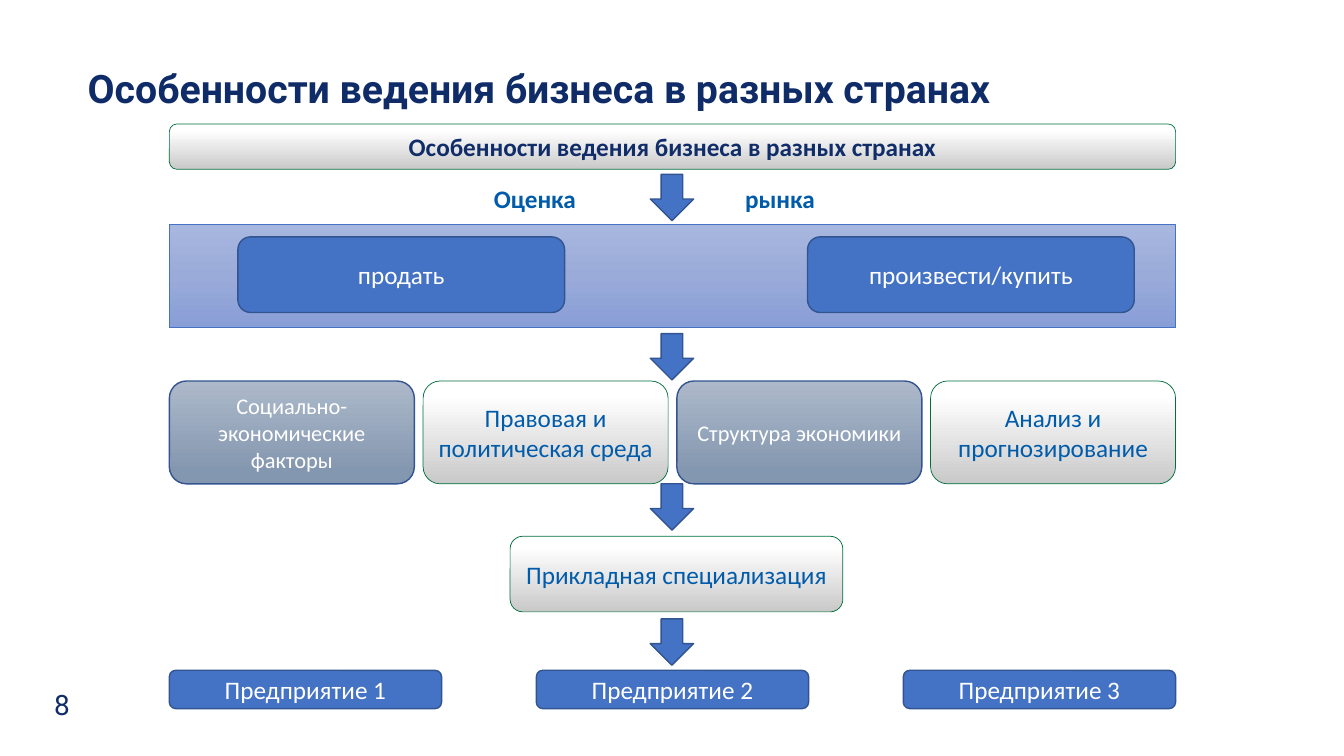
from pptx import Presentation
from pptx import util as u
from pptx.dml import color
from pptx.enum import shapes, text
from pptx.oxml import ns
from lxml import etree

NAVY, TITLE_NAVY, AZURE, WHITE = "102D69", "0F2C68", "005BAA", "FFFFFF"
RECT = shapes.MSO_SHAPE.RECTANGLE
ROUNDED = shapes.MSO_SHAPE.ROUNDED_RECTANGLE
ARROW = shapes.MSO_SHAPE.DOWN_ARROW


def rgb(value):
    """Turn a hex string into a colour."""
    return color.RGBColor.from_string(value)


class BusinessSlide:
    """Holds the box styles and draws elements on the current slide."""

    styles = {
        "solid": {"fill": "4472C4", "line": ("325491", 1)},
        "band": {"stops": [(0, "A8B7DF"), (50, "9AABD9"), (100, "889ED7")],
                 "angle": 270, "line": ("4472C4", 0.5)},
        "light": {"stops": [(0, "C9C9C9"), (86, "FFFFFF")],
                  "angle": 90, "line": ("00703C", 0.5)},
        "steel": {"stops": [(0, "ADB9CA"), (88, "8497B0")],
                  "angle": 270, "line": ("325491", 1)},
    }

    def __init__(self, slide):
        """Keep the slide that is drawn on."""
        self.slide = slide

    def set_text(self, shape, wording, ink, size=18, bold=False, font="Calibri",
                 align=text.PP_ALIGN.CENTER):
        """Put one formatted paragraph into a shape."""
        shape.text_frame.word_wrap = True
        paragraph = shape.text_frame.paragraphs[0]
        paragraph.alignment = align
        run = paragraph.add_run()
        run.text = wording
        for key, value in {"name": font, "size": u.Pt(size), "bold": bold}.items():
            setattr(run.font, key, value)
        run.font.color.rgb = rgb(ink)

    def gradient(self, shape, stops, angle):
        """Fill a shape with a linear gradient of any number of stops."""
        shape.fill.gradient()
        shape.fill.gradient_angle = angle
        stop_list = shape.element.find(".//" + ns.qn("a:gsLst"))
        for stop in list(stop_list):
            stop_list.remove(stop)
        for position, value in stops:
            stop = etree.SubElement(stop_list, ns.qn("a:gs"), pos=str(position * 1000))
            etree.SubElement(stop, ns.qn("a:srgbClr"), val=value)

    def box(self, place, style, wording="", ink=WHITE, kind=ROUNDED, **fmt):
        """Draw a preset shape in a named style, with optional text."""
        shape = self.slide.shapes.add_shape(kind, *map(u.Inches, place))
        shape.shadow.inherit = False
        look = self.styles[style]
        if "fill" in look:
            shape.fill.solid()
            shape.fill.fore_color.rgb = rgb(look["fill"])
        else:
            self.gradient(shape, look["stops"], look["angle"])
        line_color, width = look["line"]
        shape.line.color.rgb = rgb(line_color)
        shape.line.width = u.Pt(width)
        if wording:
            shape.text_frame.vertical_anchor = text.MSO_ANCHOR.MIDDLE
            self.set_text(shape, wording, ink, **fmt)

    def label(self, place, wording, ink, margins=(0, 0, 0, 0), **fmt):
        """Draw a text box."""
        shape = self.slide.shapes.add_textbox(*map(u.Inches, place))
        for side, margin in zip(("left", "top", "right", "bottom"), margins):
            setattr(shape.text_frame, f"margin_{side}", u.Inches(margin))
        self.set_text(shape, wording, ink, **fmt)


def main():
    """Build the slide and save it."""
    deck = Presentation()
    deck.slide_width, deck.slide_height = u.Inches(13.33), u.Inches(7.5)
    page = BusinessSlide(deck.slides.add_slide(deck.slide_layouts[6]))
    left, width = 1.68, 9.98
    heading = "Особенности ведения бизнеса в разных странах"

    page.label((0.25, 6.82, 0.73, 0.34), "8", NAVY, size=20, font="Roboto")
    page.label((0.87, 0.64, 11.35, 0.95), heading, TITLE_NAVY, size=28, bold=True,
               font="Roboto", align=text.PP_ALIGN.LEFT)

    page.box((left, 2.23, width, 1.02), "band", kind=RECT)
    page.box((left, 1.23, width, 0.45), "light", heading, NAVY, bold=True)

    for x, goal in ((2.36, "продать"), (8.01, "произвести/купить")):
        page.box((x, 2.35, 3.24, 0.75), "solid", goal)

    factors = (
        ("steel", "Социально-экономические факторы", WHITE, 16),
        ("light", "Правовая и политическая среда", AZURE, 18),
        ("steel", "Структура экономики", WHITE, 16),
        ("light", "Анализ и прогнозирование", AZURE, 18),
    )
    factor_width = 2.43
    factor_step = (width - factor_width) / (len(factors) - 1)
    for index, (style, factor, ink, size) in enumerate(factors):
        page.box((left + index * factor_step, 3.78, factor_width, 1.02),
                 style, factor, ink, size=size)

    page.box((5.06, 5.32, 3.3, 0.75), "light", "Прикладная специализация", AZURE)

    firm_width = 2.7
    firm_step = (width - firm_width) / 2
    for index in range(3):
        page.box((left + index * firm_step, 6.65, firm_width, 0.38),
                 "solid", f"Предприятие {index + 1}")

    for y in (1.73, 3.31, 4.8, 6.14):
        page.box((6.45, y, 0.43, 0.46), "solid", kind=ARROW)

    for x, word_width, indent, word in ((4.8, 1.47, 0.1, "Оценка"),
                                        (7.23, 1.65, 0.16, "рынка")):
        page.label((x, 1.77, word_width, 0.39), word, AZURE,
                   margins=(indent, 0.05, 0.1, 0.05), bold=True,
                   align=text.PP_ALIGN.LEFT)

    deck.save("out.pptx")


if __name__ == "__main__":
    main()
